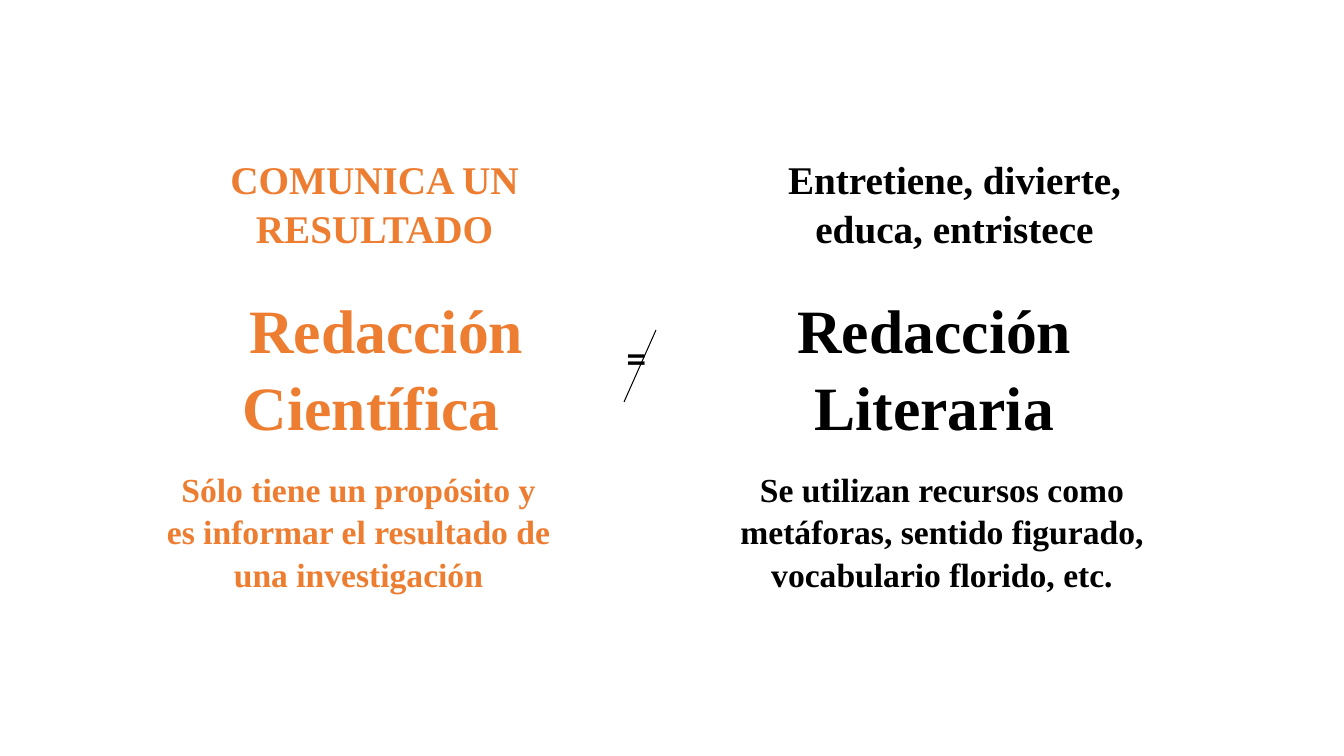
from pptx import Presentation
from pptx.dml.color import RGBColor
from pptx.enum.shapes import MSO_CONNECTOR, MSO_SHAPE
from pptx.enum.text import MSO_ANCHOR, PP_ALIGN
from pptx.oxml.ns import qn
from pptx.util import Pt
from lxml import etree

COLORS = {"orange": "ED7D31", "black": "000000", "white": "FFFFFF"}
SERIF, SANS = "Times New Roman", "Cabin"
PX = 9071

TEXTS = [
    ("Entretiene, divierte, educa, entristece", "black", 28, (720, 148, 469, 104)),
    ("Se utilizan recursos como metáforas, sentido figurado, vocabulario florido, etc.",
     "black", 24, (704, 462, 476, 132)),
    ("COMUNICA UN RESULTADO", "orange", 28, (140, 148, 469, 104)),
    ("Sólo tiene un propósito y es informar el resultado de una investigación",
     "orange", 24, (156, 462, 405, 132)),
]
HEADINGS = [
    ("Redacción Literaria", "black", (696, 283, 477, 159)),
    ("Redacción\nCientífica", "orange", (228, 283, 317, 159)),
]
EQUALS_BOX = (616, 323, 52, 64)
SLASH = (656, 330, 624, 402)
SECOND_LINE_INDENT = 5


def emu(lengths):
    return [n * PX for n in lengths]


def rgb(name):
    return RGBColor.from_string(COLORS[name])


def write(shape, text, color, size, font=SERIF, bold=True, align=PP_ALIGN.CENTER, spacing=1.05):
    tf = shape.text_frame
    tf.word_wrap = True
    tf.text = text
    for p in tf.paragraphs:
        p.alignment = align
        p.line_spacing = spacing
        for r in p.runs:
            r.font.name = font
            r.font.size = Pt(size)
            r.font.bold = bold
            r.font.color.rgb = rgb(color)
    return tf


prs = Presentation()
prs.slide_width, prs.slide_height = emu((1344, 756))
s = prs.slides.add_slide(prs.slide_layouts[6])

for text, color, size, box in TEXTS:
    write(s.shapes.add_textbox(*emu(box)), text, color, size)

for text, color, box in HEADINGS:
    sp = s.shapes.add_shape(MSO_SHAPE.RECTANGLE, *emu(box))
    sp.shadow.inherit = False
    sp.fill.solid()
    sp.fill.fore_color.rgb = rgb("white")
    sp.line.color.rgb = rgb("white")
    sp.line.width = Pt(0.75)
    tf = write(sp, text, color, 44)
    tf.vertical_anchor = MSO_ANCHOR.TOP
    for p in tf.paragraphs[1:]:
        p.alignment = PP_ALIGN.LEFT
        p._p.get_or_add_pPr().set("marL", str(SECOND_LINE_INDENT * PX))

not_equal = s.shapes.add_group_shape()
equals = not_equal.shapes.add_textbox(*emu(EQUALS_BOX))
tf = write(equals, "=", "black", 32, SANS, False, PP_ALIGN.LEFT, 1.0)
tf.word_wrap = False
slash = not_equal.shapes.add_connector(MSO_CONNECTOR.STRAIGHT, *emu(SLASH))
slash.line.color.rgb = rgb("black")
slash.line.width = Pt(0.75)
etree.SubElement(slash._element.spPr, qn("a:effectLst"))

prs.save("out.pptx")
